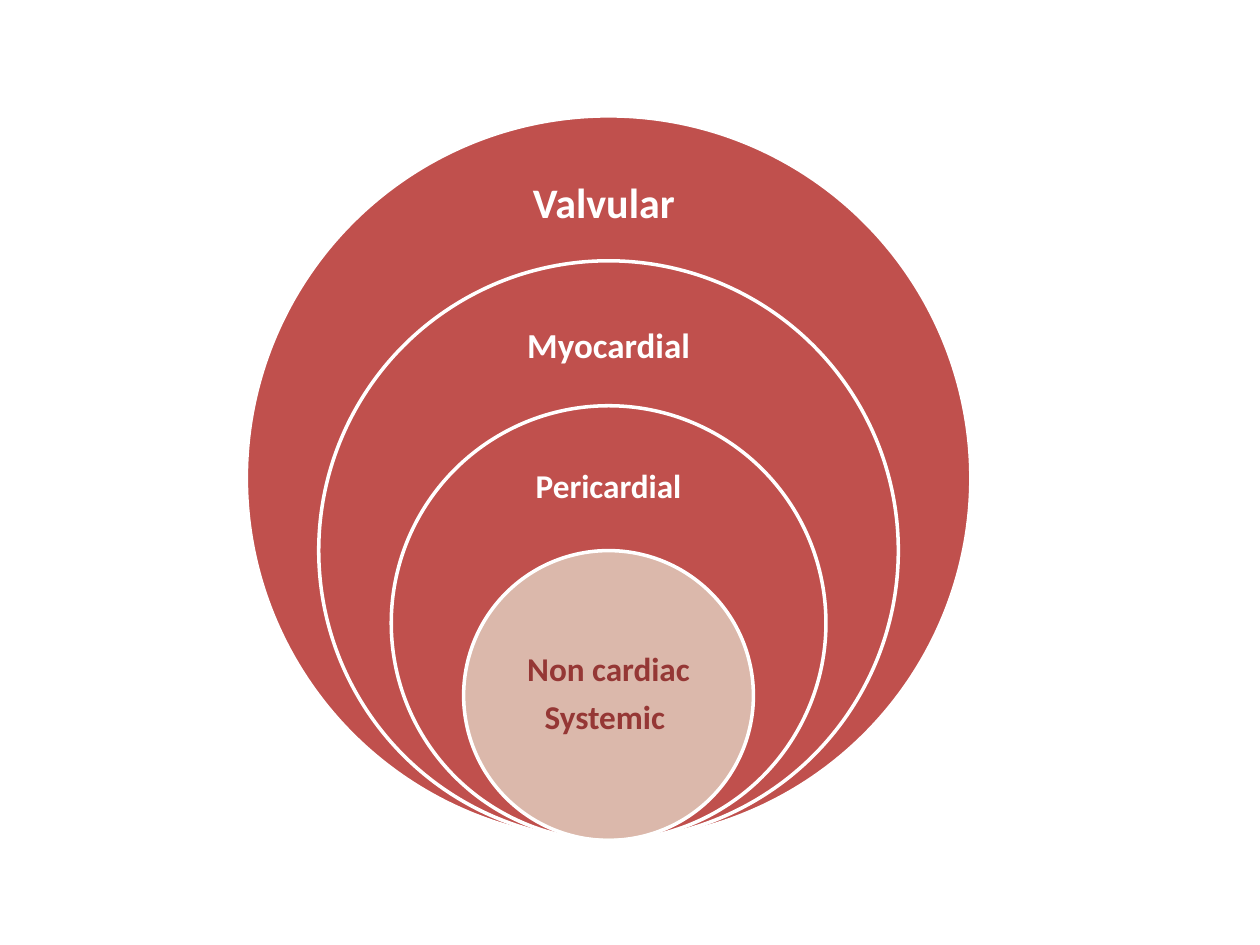
from dataclasses import dataclass

from lxml.etree import SubElement
from pptx import Presentation
from pptx.dml.color import RGBColor
from pptx.enum.shapes import MSO_SHAPE
from pptx.enum.text import MSO_ANCHOR, PP_ALIGN
from pptx.oxml.ns import qn
from pptx.slide import Slide
from pptx.util import Inches, Pt


@dataclass(frozen=True)
class Theme:
    font: str = "Calibri"
    ring: str = "C0504D"
    core: str = "EBF1DE"
    light: str = "FFFFFF"
    dark: str = "953735"
    outline: float = 2
    large: int = 24
    medium: int = 20
    small: int = 19


THEME = Theme()
CENTER_X = 4.83
BOTTOM = 6.67
OUTER = 5.75
STEP = OUTER / 5


@dataclass(frozen=True)
class Ring:
    lines: tuple[str, ...]
    size: int
    label_top: float
    label_height: float
    inset: float = 0.15
    fill: str = THEME.ring
    color: str = THEME.light
    opacity: int = 100
    label_width: float = 1.61


RINGS = (
    Ring(("Valvular ",), THEME.large, 1.2, 0.86, 0.19),
    Ring(("Myocardial ",), THEME.medium, 2.34, 0.83),
    Ring(("Pericardial",), THEME.small, 3.48, 0.78),
    Ring(("Non cardiac ", "Systemic "), THEME.small, 4.94, 1.15,
         fill=THEME.core, color=THEME.dark, opacity=65, label_width=1.63),
)


def add_circle(s: Slide, ring: Ring, diameter: float) -> None:
    sp = s.shapes.add_shape(
        MSO_SHAPE.OVAL, Inches(CENTER_X - diameter / 2),
        Inches(BOTTOM - diameter), Inches(diameter), Inches(diameter))
    sp.shadow.inherit = False
    sp.fill.solid()
    sp.fill.fore_color.rgb = RGBColor.from_string(ring.fill)
    sp.line.color.rgb = RGBColor.from_string(THEME.light)
    sp.line.width = Pt(THEME.outline)
    if ring.opacity < 100:
        color = sp.element.spPr.find(qn("a:solidFill"))[0]
        SubElement(color, qn("a:alpha"), val=str(ring.opacity * 1000))


def add_label(s: Slide, ring: Ring) -> None:
    sp = s.shapes.add_textbox(
        Inches(CENTER_X - ring.label_width / 2), Inches(ring.label_top),
        Inches(ring.label_width), Inches(ring.label_height))
    tf = sp.text_frame
    tf.word_wrap = True
    tf.vertical_anchor = MSO_ANCHOR.MIDDLE
    tf.margin_left = tf.margin_right = Inches(ring.inset)
    tf.margin_top = tf.margin_bottom = Inches(ring.inset)
    tf.text = "\n".join(ring.lines)
    for p in tf.paragraphs:
        p.alignment = PP_ALIGN.CENTER
        p.line_spacing = 0.9
        p.space_after = Pt(ring.size * 0.35)
        for r in p.runs:
            r.font.name = THEME.font
            r.font.size = Pt(ring.size)
            r.font.bold = True
            r.font.color.rgb = RGBColor.from_string(ring.color)


def main() -> None:
    prs = Presentation()
    prs.slide_width, prs.slide_height = Inches(10), Inches(7.5)
    s = prs.slides.add_slide(prs.slide_layouts[6])
    for i, ring in enumerate(RINGS):
        add_circle(s, ring, OUTER - i * STEP)
        add_label(s, ring)
    prs.save("out.pptx")


if __name__ == "__main__":
    main()
